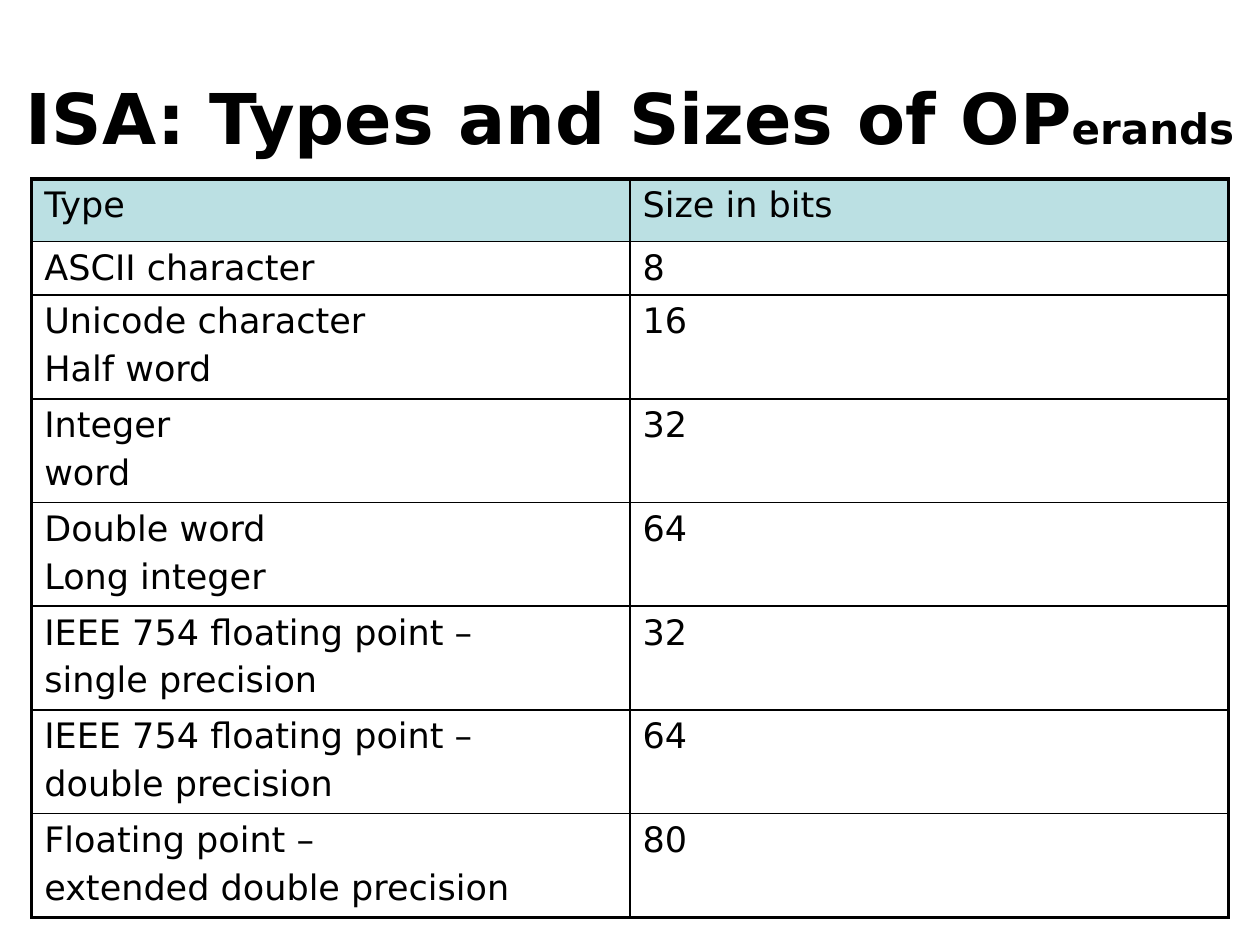
"""Build a slide with a table of operand types and their sizes."""
from pptx import Presentation as Deck
from pptx.dml.color import RGBColor as RGB
from pptx.enum.text import MSO_ANCHOR as Anchor, PP_ALIGN as Align
from pptx.oxml import parse_xml
from pptx.oxml.ns import nsdecls
from pptx.util import Cm, Pt

BLACK = RGB(0x00, 0x00, 0x00)
TEAL = RGB(0xBB, 0xE0, 0xE3)
FACE = "DejaVu Sans"
THIN, THICK = Pt(1), Pt(2.25)


def style(font, size, bold):
    for key, val in {"name": FACE, "size": Pt(size), "bold": bold}.items():
        setattr(font, key, val)
    font.color.rgb = BLACK


def edge(cell, side, width):
    cell._tc.get_or_add_tcPr().append(parse_xml(
        f'<a:ln{side} {nsdecls("a")} w="{width}"><a:solidFill>'
        f'<a:srgbClr val="{BLACK}"/></a:solidFill></a:ln{side}>'))


deck = Deck()
deck.slide_width, deck.slide_height = Cm(25.4), Cm(19.05)
slide = deck.slides.add_slide(deck.slide_layouts[5])

title = slide.shapes.title
place = {"left": Cm(0), "top": Cm(0.76), "width": Cm(25.4), "height": Cm(3.18)}
for key, val in place.items():
    setattr(title, key, val)
frame = title.text_frame
frame.word_wrap = True
frame.vertical_anchor = Anchor.MIDDLE
head = frame.paragraphs[0]
head.alignment = Align.CENTER
for text, size in (("ISA: Types and Sizes of OP", 40), ("erands", 24)):
    run = head.add_run()
    run.text = text
    style(run.font, size, True)

rows = [
    ("Type", "Size in bits"),
    ("ASCII character", "8"),
    ("Unicode character\nHalf word", "16"),
    ("Integer\nword", "32"),
    ("Double word\nLong integer", "64"),
    ("IEEE 754 floating point –\nsingle precision", "32"),
    ("IEEE 754 floating point –\ndouble precision", "64"),
    ("Floating point –\nextended double precision", "80"),
]
highs = [1.26, 1.08] + [2.09] * 6
last = len(rows) - 1
table = slide.shapes.add_table(
    len(rows), 2, Cm(0.64), Cm(3.61), Cm(24.13), Cm(sum(highs))).table
for col in table.columns:
    col.width = Cm(12.06)

for r, (row, high) in enumerate(zip(rows, highs)):
    table.rows[r].height = Cm(high)
    for c, text in enumerate(row):
        cell = table.cell(r, c)
        cell.text = text
        for i, para in enumerate(cell.text_frame.paragraphs):
            para.space_before = Pt(4 if i else 0)
            for run in para.runs:
                style(run.font, 20, False)
        outer = {"L": c == 0, "R": c == 1, "T": r == 0, "B": r == last}
        for side, rim in outer.items():
            edge(cell, side, THICK if rim else THIN)
        if r == 0:
            cell.fill.solid()
            cell.fill.fore_color.rgb = TEAL
        else:
            cell.fill.background()

deck.save("out.pptx")
